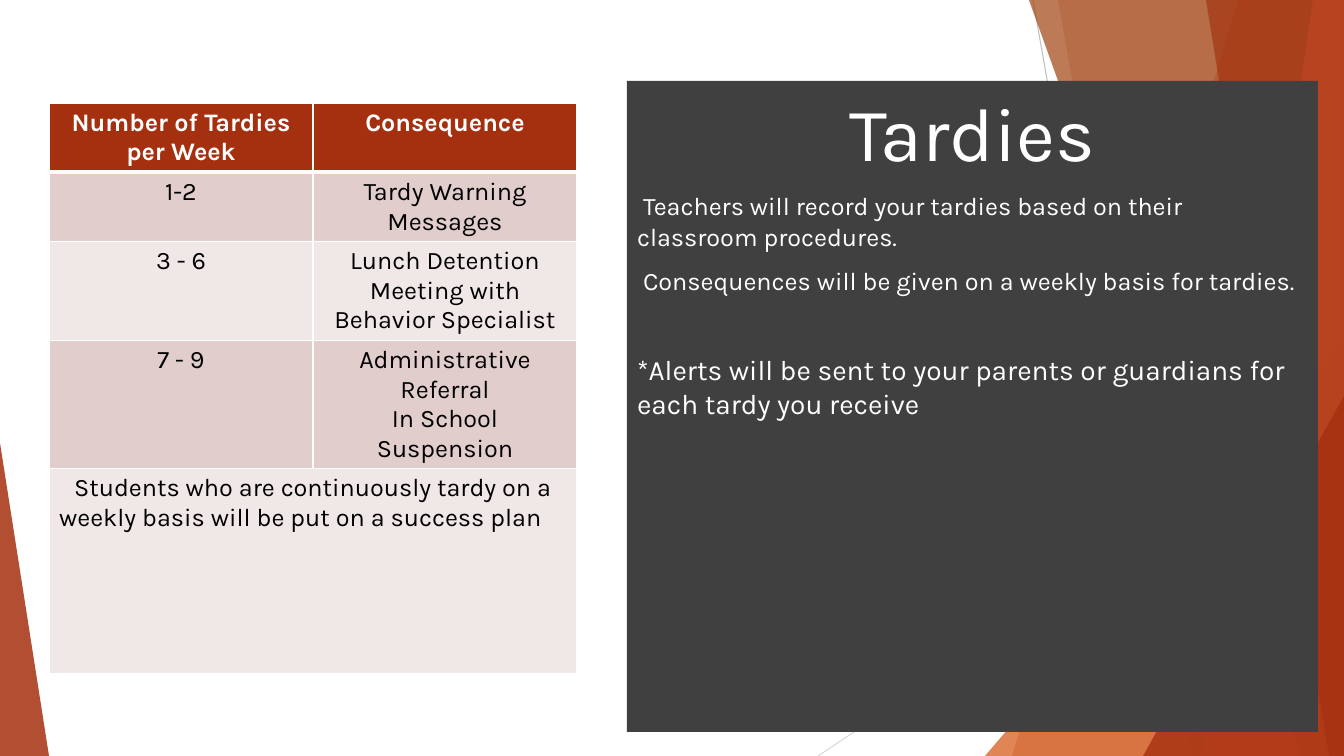
from dataclasses import dataclass

from lxml import etree
from pptx import Presentation
from pptx.dml.color import RGBColor
from pptx.enum.shapes import MSO_CONNECTOR, MSO_SHAPE
from pptx.enum.text import MSO_ANCHOR, MSO_AUTO_SIZE, PP_ALIGN
from pptx.oxml.ns import qn
from pptx.util import Pt

EMU_PER_PX = 914400 / 100.8
WIDTH, HEIGHT = 1344, 756
LEFT, CENTER = PP_ALIGN.LEFT, PP_ALIGN.CENTER
STRAIGHT = MSO_CONNECTOR.STRAIGHT
TRIANGLE = MSO_SHAPE.ISOSCELES_TRIANGLE
FONT = "Karla"
WHITE, BLACK, RUST, CHARCOAL = "FFFFFF", "000000", "A5300F", "404040"
BANDS = ("E1CDCC", "F0E8E7")


@dataclass(frozen=True)
class Ray:
    start: tuple[int, int]
    end: tuple[int, int]
    color: str


@dataclass(frozen=True)
class Facet:
    top: int
    bottom: int
    color: str
    opacity: int


@dataclass(frozen=True)
class Wedge:
    left: int
    top: int
    width: int
    height: int
    apex: int
    color: str
    opacity: int


@dataclass(frozen=True)
class TextLine:
    text: str
    size: int
    alignment: PP_ALIGN = LEFT
    before: int = 10
    color: str = WHITE
    bold: bool = False
    indent: int = 0


DECORATION = (
    Ray((1033, 0), (1167, HEIGHT), "BFBFBF"),
    Ray((WIDTH, 406), (818, HEIGHT), "D9D9D9"),
    Facet(1238, 1012, RUST, 30),
    Facet(1058, 1192, RUST, 20),
    Wedge(985, 336, 359, 420, 1, "D55816", 72),
    Facet(1029, 1301, "A04210", 70),
    Facet(1313, 1202, "EE6E4A", 70),
    Facet(1206, 1329, RUST, 65),
    Wedge(1143, 396, 201, 360, 1, RUST, 80),
    Wedge(0, 443, 49, 313, 0, RUST, 85),
)
PANEL_LINES = (
    TextLine("Tardies", 54, CENTER),
    TextLine(" Teachers will record your tardies based on their classroom procedures.", 18),
    TextLine(" Consequences will be given on a weekly basis for tardies. ", 18),
    TextLine("*Alerts will be sent to your parents or guardians for each tardy you receive", 20, before=41),
)
TABLE_ROWS = (
    (("Number of Tardies per Week",), ("Consequence",)),
    (("1-2",), ("Tardy Warning Messages",)),
    (("3 - 6",), ("Lunch Detention", "Meeting with Behavior Specialist")),
    (("7 - 9",), ("Administrative Referral", "In School Suspension")),
)
SUCCESS_PLAN = TextLine(
    "Students who are continuously tardy on a weekly basis will be put on a success plan",
    18, before=0, color=BLACK, indent=15,
)


def px(length: int) -> int:
    return round(length * EMU_PER_PX)


def rgb(color: str) -> RGBColor:
    return RGBColor.from_string(color)


def apply_format(target, values: dict) -> None:
    for name, value in values.items():
        setattr(target, name, value)


def paint(shape, color: str, opacity: int = 100) -> None:
    shape.fill.solid()
    shape.fill.fore_color.rgb = rgb(color)
    if opacity < 100:
        color_element = shape.fill._xPr.find(qn("a:solidFill"))[0]
        etree.SubElement(color_element, qn("a:alpha"), val=str(opacity * 1000))


def finish_decoration(shape, color: str, opacity: int) -> None:
    shape.shadow.inherit = False
    paint(shape, color, opacity)
    shape.line.fill.background()


def draw_ray(slide, ray: Ray) -> None:
    connector = slide.shapes.add_connector(STRAIGHT, *map(px, ray.start + ray.end))
    connector.line.color.rgb = rgb(ray.color)
    connector.line.width = Pt(0.75)
    etree.SubElement(connector._element.spPr, qn("a:effectLst"))


def draw_facet(slide, facet: Facet) -> None:
    builder = slide.shapes.build_freeform(facet.top, 0, scale=EMU_PER_PX)
    builder.add_line_segments([(WIDTH, 0), (WIDTH, HEIGHT), (facet.bottom, HEIGHT)])
    finish_decoration(builder.convert_to_shape(), facet.color, facet.opacity)


def draw_wedge(slide, wedge: Wedge) -> None:
    box = map(px, (wedge.left, wedge.top, wedge.width, wedge.height))
    shape = slide.shapes.add_shape(TRIANGLE, *box)
    shape.adjustments[0] = wedge.apex
    finish_decoration(shape, wedge.color, wedge.opacity)


def write_lines(text_frame, lines: tuple[TextLine, ...]) -> None:
    for index, line in enumerate(lines):
        paragraph = text_frame.add_paragraph() if index else text_frame.paragraphs[0]
        paragraph.text = line.text
        apply_format(paragraph, {
            "alignment": line.alignment, "space_before": Pt(line.before),
            "space_after": Pt(0), "line_spacing": 1.0,
        })
        properties = paragraph._p.get_or_add_pPr()
        properties.set("marL", "0")
        properties.set("indent", str(px(line.indent)))
        etree.SubElement(properties, qn("a:buNone"))
        font = paragraph.runs[0].font
        apply_format(font, {"name": FONT, "size": Pt(line.size), "bold": line.bold})
        font.color.rgb = rgb(line.color)


def draw_panel(slide) -> None:
    slide.shapes.title._element.getparent().remove(slide.shapes.title._element)
    panel = slide.placeholders[1]
    apply_format(panel, {"left": px(627), "top": px(81), "width": px(691), "height": px(651)})
    paint(panel, CHARCOAL)
    apply_format(panel.text_frame, {
        "word_wrap": True, "auto_size": MSO_AUTO_SIZE.NONE, "vertical_anchor": MSO_ANCHOR.TOP,
    })
    write_lines(panel.text_frame, PANEL_LINES)


def style_cell(cell, color: str, bottom_width: int) -> None:
    properties = cell._tc.get_or_add_tcPr()
    for side, width in (("L", 1), ("R", 1), ("T", 1), ("B", bottom_width)):
        border = etree.SubElement(properties, qn(f"a:ln{side}"), w=str(Pt(width)))
        fill = etree.SubElement(border, qn("a:solidFill"))
        etree.SubElement(fill, qn("a:srgbClr"), val=WHITE)
    paint(cell, color)


def draw_table(slide) -> None:
    row_count = len(TABLE_ROWS) + 1
    frame = slide.shapes.add_table(row_count, 2, *map(px, (49, 103, 528, 480)))
    table = frame.table
    for index, row in enumerate(table.rows):
        row.height = px(205 if index == row_count - 1 else 68)
        for cell in row.cells:
            style_cell(cell, BANDS[(index - 1) % 2] if index else RUST, 1 if index else 3)
    for row_index, row_texts in enumerate(TABLE_ROWS):
        header = row_index == 0
        for column_index, texts in enumerate(row_texts):
            lines = tuple(
                TextLine(text, 18, CENTER, 0, WHITE if header else BLACK, header) for text in texts
            )
            write_lines(table.cell(row_index, column_index).text_frame, lines)
    plan_cell = table.cell(row_count - 1, 0)
    plan_cell.merge(table.cell(row_count - 1, 1))
    write_lines(plan_cell.text_frame, (SUCCESS_PLAN,))


def main() -> None:
    presentation = Presentation()
    apply_format(presentation, {"slide_width": px(WIDTH), "slide_height": px(HEIGHT)})
    slide = presentation.slides.add_slide(presentation.slide_layouts[1])
    painters = {Ray: draw_ray, Facet: draw_facet, Wedge: draw_wedge}
    for item in DECORATION:
        painters[type(item)](slide, item)
    draw_panel(slide)
    slide.shapes._spTree.append(slide.placeholders[1]._element)
    draw_table(slide)
    presentation.save("out.pptx")


if __name__ == "__main__":
    main()
